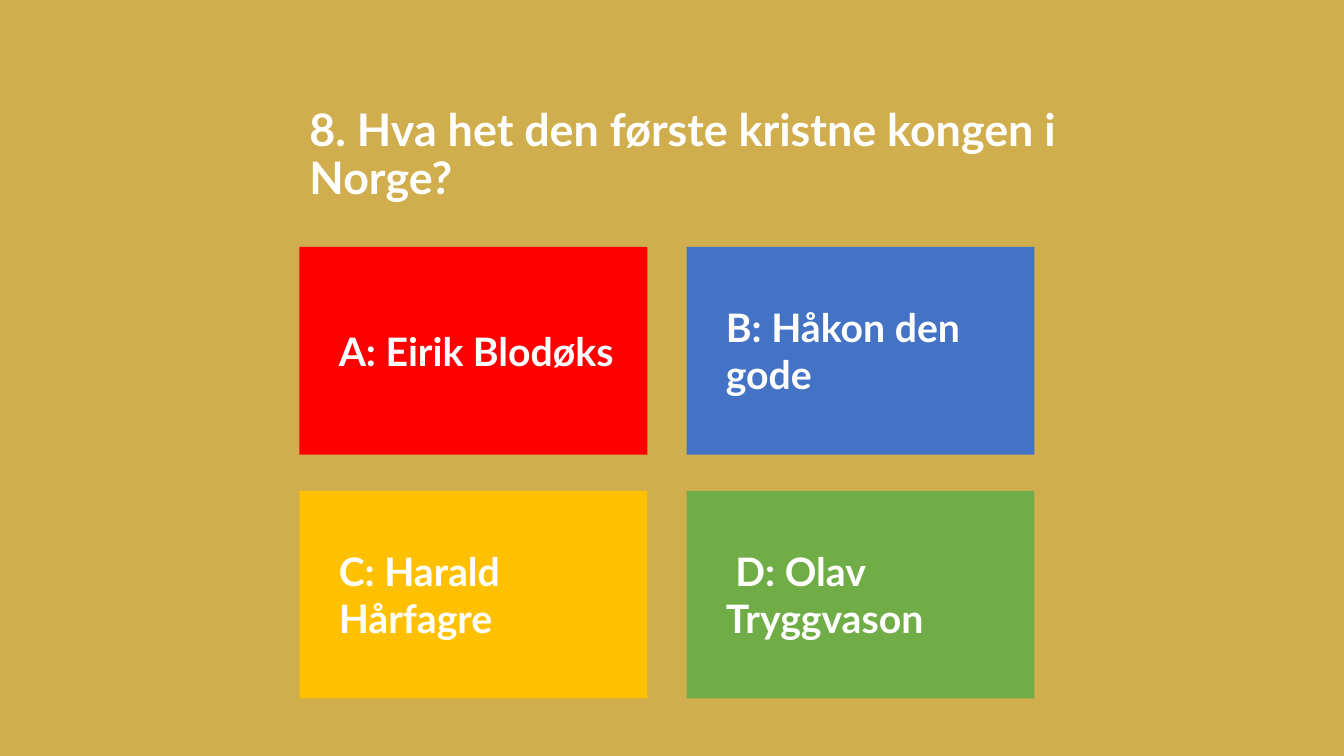
"""Build a quiz slide with one question and four coloured answer cards."""
from pptx import Presentation
from pptx.dml.color import RGBColor
from pptx.enum.shapes import MSO_SHAPE
from pptx.enum.text import MSO_ANCHOR as ANCHOR, PP_ALIGN as ALIGN
from pptx.util import Inches, Pt

BACKGROUND = "D0AE4E"
QUESTION = "8. Hva het den første kristne kongen i Norge?"
ANSWERS = [
    ("A: Eirik Blodøks", "FF0000"),
    ("B: Håkon den gode", "4472C4"),
    ("C: Harald Hårfagre", "FFC000"),
    (" D: Olav Tryggvason", "70AD47"),
]
LEFT, TOP = 2.97, 2.45
CARD_W, CARD_H = 3.45, 2.06
STEP_X, STEP_Y = 3.84, 2.42


def paint(fill, color):
    fill.solid()
    fill.fore_color.rgb = RGBColor.from_string(color)


def write(tf, text, size, anchor):
    tf.word_wrap = True
    tf.vertical_anchor = anchor
    p = tf.paragraphs[0]
    p.alignment = ALIGN.LEFT
    r = p.add_run()
    r.text = text
    r.font.name = "Lato"
    r.font.size = Pt(size)
    r.font.bold = True
    r.font.color.rgb = RGBColor.from_string("FFFFFF")
    return p


def add_question(slide):
    sp = slide.shapes.add_textbox(Inches(LEFT), Inches(0.95), Inches(8.69), Inches(1.13))
    p = write(sp.text_frame, QUESTION, 32, ANCHOR.BOTTOM)
    p.line_spacing = 0.9


def add_answer(slide, index, text, color):
    row, col = divmod(index, 2)
    sp = slide.shapes.add_shape(
        MSO_SHAPE.RECTANGLE,
        Inches(LEFT + col * STEP_X), Inches(TOP + row * STEP_Y),
        Inches(CARD_W), Inches(CARD_H),
    )
    sp.shadow.inherit = False
    paint(sp.fill, color)
    sp.line.fill.background()
    tf = sp.text_frame
    tf.margin_left = Inches(0.39)
    tf.margin_top = tf.margin_right = tf.margin_bottom = Inches(0.2)
    write(tf, text, 28, ANCHOR.MIDDLE)


def main():
    prs = Presentation()
    prs.slide_width, prs.slide_height = Inches(13.33), Inches(7.5)
    slide = prs.slides.add_slide(prs.slide_layouts[6])
    paint(slide.background.fill, BACKGROUND)
    add_question(slide)
    for index, (text, color) in enumerate(ANSWERS):
        add_answer(slide, index, text, color)
    prs.save("out.pptx")


if __name__ == "__main__":
    main()
